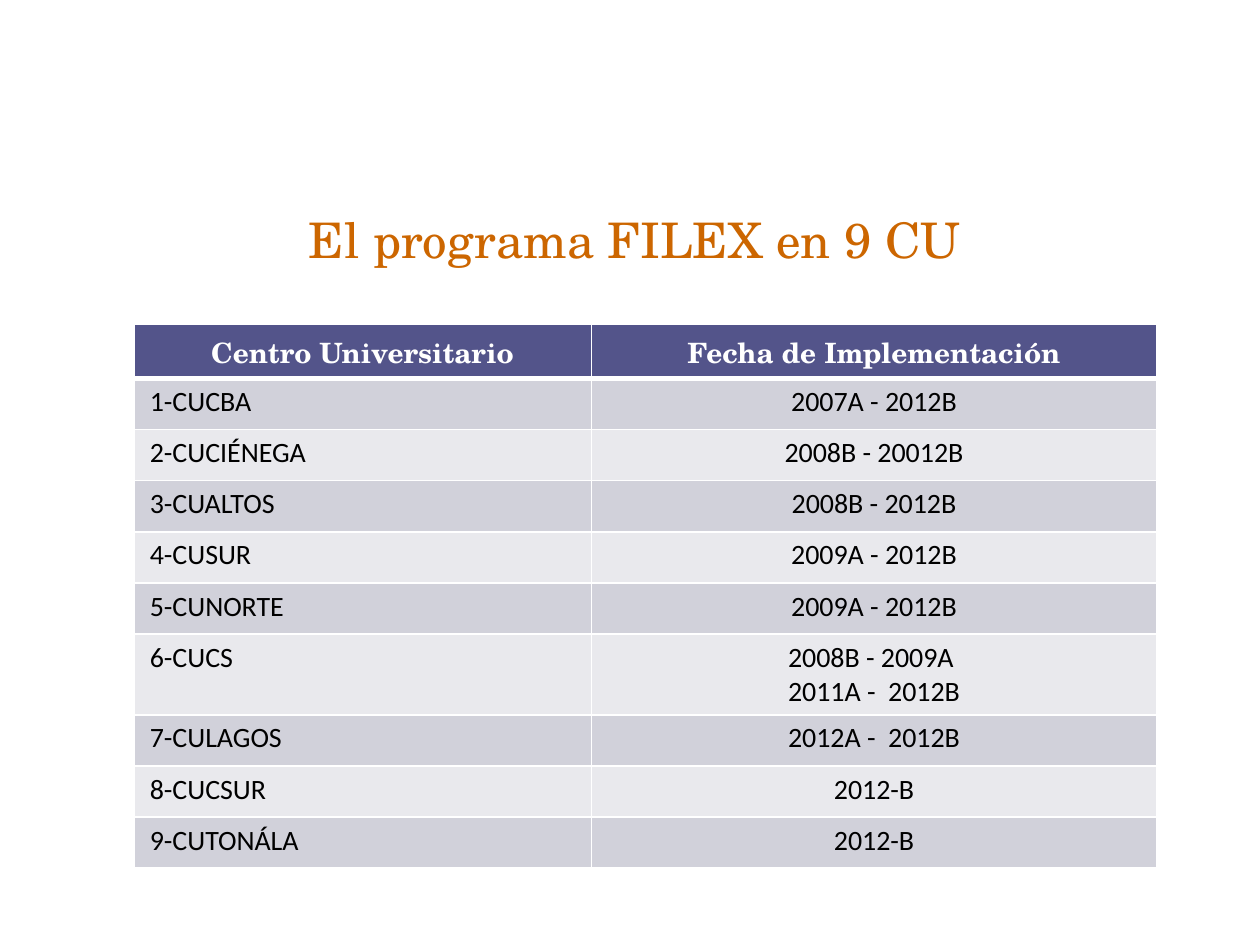
"""Build the slide listing the university centres of the FILEX programme."""
from dataclasses import dataclass

from lxml.etree import SubElement
from pptx import Presentation
from pptx.dml.color import RGBColor
from pptx.enum.text import MSO_ANCHOR, PP_ALIGN
from pptx.oxml.ns import qn
from pptx.util import Cm, Pt


@dataclass(frozen=True)
class Theme:
    orange: str = "CC6600"
    head: str = "53548A"
    bands: tuple = ("D1D1DA", "E9E9ED")
    white: str = "FFFFFF"
    black: str = "000000"
    serif: str = "TeX Gyre Schola"
    sans: str = "Calibri"
    title: int = 28
    body: int = 16
    thin: int = 1
    thick: int = 3


@dataclass(frozen=True)
class Style:
    name: str
    size: int
    color: str
    bold: bool = False


@dataclass(frozen=True)
class Centre:
    name: str
    dates: str
    height: float = 1.03


THEME = Theme()
TITLE = Style(THEME.serif, THEME.title, THEME.orange)
HEAD = Style(THEME.serif, THEME.body, THEME.white, True)
BODY = Style(THEME.sans, THEME.body, THEME.black)
WIDTHS = (9.22, 11.4)
ROWS = (
    Centre("Centro Universitario", "Fecha de Implementación", 1.1),
    Centre("1-CUCBA", "2007A - 2012B"),
    Centre("2-CUCIÉNEGA", "2008B - 20012B"),
    Centre("3-CUALTOS", "2008B - 2012B"),
    Centre("4-CUSUR", "2009A - 2012B"),
    Centre("5-CUNORTE", "2009A - 2012B"),
    Centre("6-CUCS", "2008B - 2009A \n2011A -  2012B", 1.63),
    Centre("7-CULAGOS", "2012A -  2012B"),
    Centre("8-CUCSUR", "2012-B"),
    Centre("9-CUTONÁLA", "2012-B"),
)


def write(frame, text: str, style: Style, align: PP_ALIGN) -> None:
    frame.text = text
    values = {"name": style.name, "size": Pt(style.size), "bold": style.bold}
    for para in frame.paragraphs:
        para.alignment = align
        for run in para.runs:
            for key, value in values.items():
                setattr(run.font, key, value)
            run.font.color.rgb = RGBColor.from_string(style.color)


def border(cell, bottom: int, top: int) -> None:
    props = cell._tc.get_or_add_tcPr()
    sides = {"lnL": THEME.thin, "lnR": THEME.thin, "lnT": top, "lnB": bottom}
    for index, (side, width) in enumerate(sides.items()):
        line = props.makeelement(qn(f"a:{side}"), {"w": str(Pt(width))})
        fill = SubElement(line, qn("a:solidFill"))
        SubElement(fill, qn("a:srgbClr"), val=THEME.white)
        props.insert(index, line)


def dress(cell, color: str, row: int) -> None:
    margins = {"margin_left": 0.32, "margin_right": 0.32,
               "margin_top": 0.13, "margin_bottom": 0.13}
    for key, value in margins.items():
        setattr(cell, key, Cm(value))
    cell.fill.solid()
    cell.fill.fore_color.rgb = RGBColor.from_string(color)
    border(cell, THEME.thin if row else THEME.thick,
           THEME.thick if row == 1 else THEME.thin)


def add_title(slide, text: str) -> None:
    box = slide.shapes.add_textbox(Cm(1.5), Cm(3.33), Cm(22.86), Cm(2.97))
    frame = box.text_frame
    frame.word_wrap = True
    frame.vertical_anchor = MSO_ANCHOR.MIDDLE
    write(frame, text, TITLE, PP_ALIGN.CENTER)


def add_grid(slide, rows: tuple[Centre, ...]) -> None:
    height = sum(row.height for row in rows)
    grid = slide.shapes.add_table(len(rows), len(WIDTHS), Cm(2.7), Cm(6.53),
                                  Cm(sum(WIDTHS)), Cm(height)).table
    for column, width in zip(grid.columns, WIDTHS):
        column.width = Cm(width)
    for index, row in enumerate(rows):
        grid.rows[index].height = Cm(row.height)
        color = THEME.bands[(index - 1) % 2] if index else THEME.head
        for place, text in enumerate((row.name, row.dates)):
            cell = grid.cell(index, place)
            left = index and not place
            write(cell.text_frame, text, BODY if index else HEAD,
                  PP_ALIGN.LEFT if left else PP_ALIGN.CENTER)
            dress(cell, color, index)


def main() -> None:
    deck = Presentation()
    deck.slide_width, deck.slide_height = Cm(25.4), Cm(19.05)
    slide = deck.slides.add_slide(deck.slide_layouts[6])
    add_title(slide, "El programa FILEX en 9 CU ")
    add_grid(slide, ROWS)
    deck.save("out.pptx")


if __name__ == "__main__":
    main()
